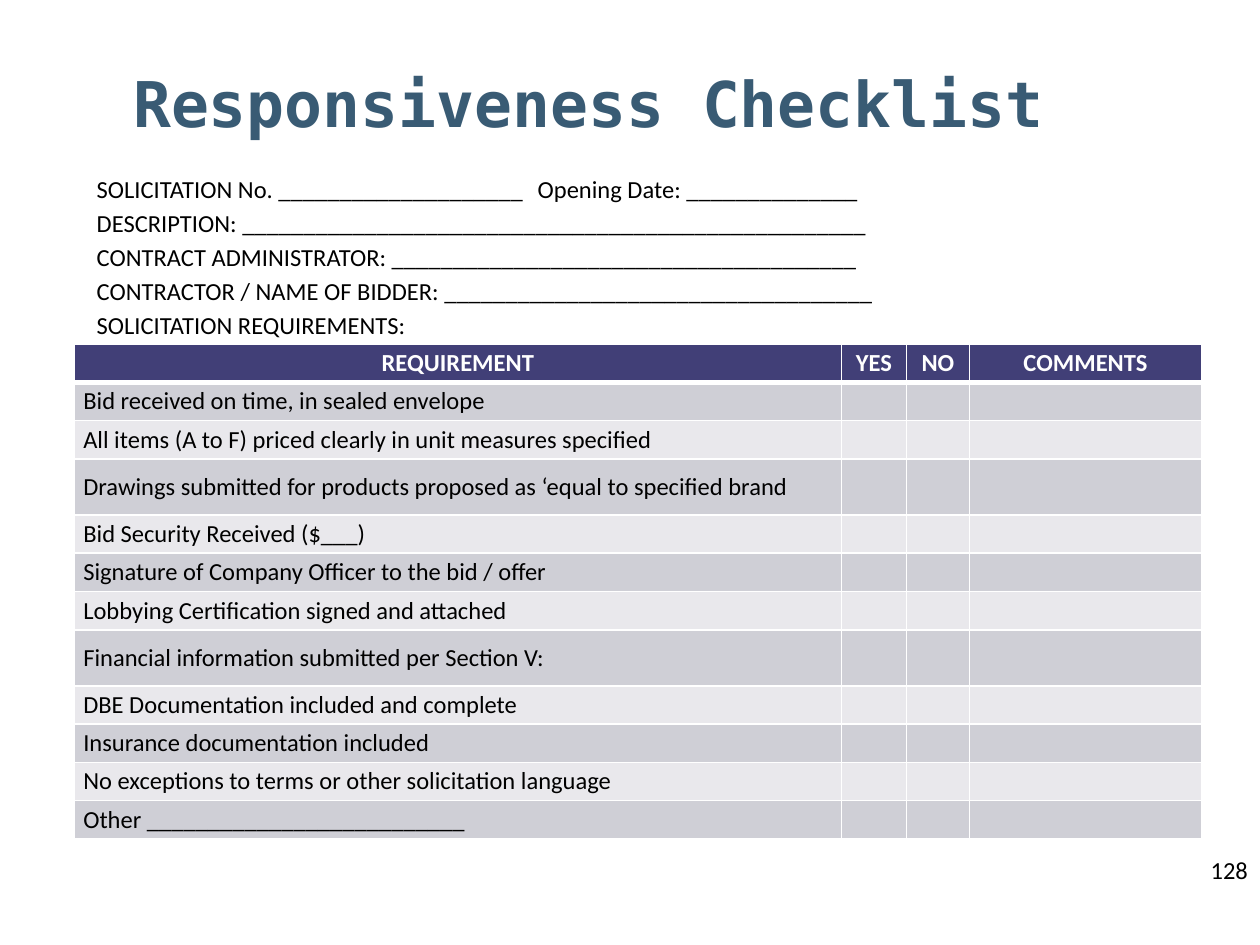
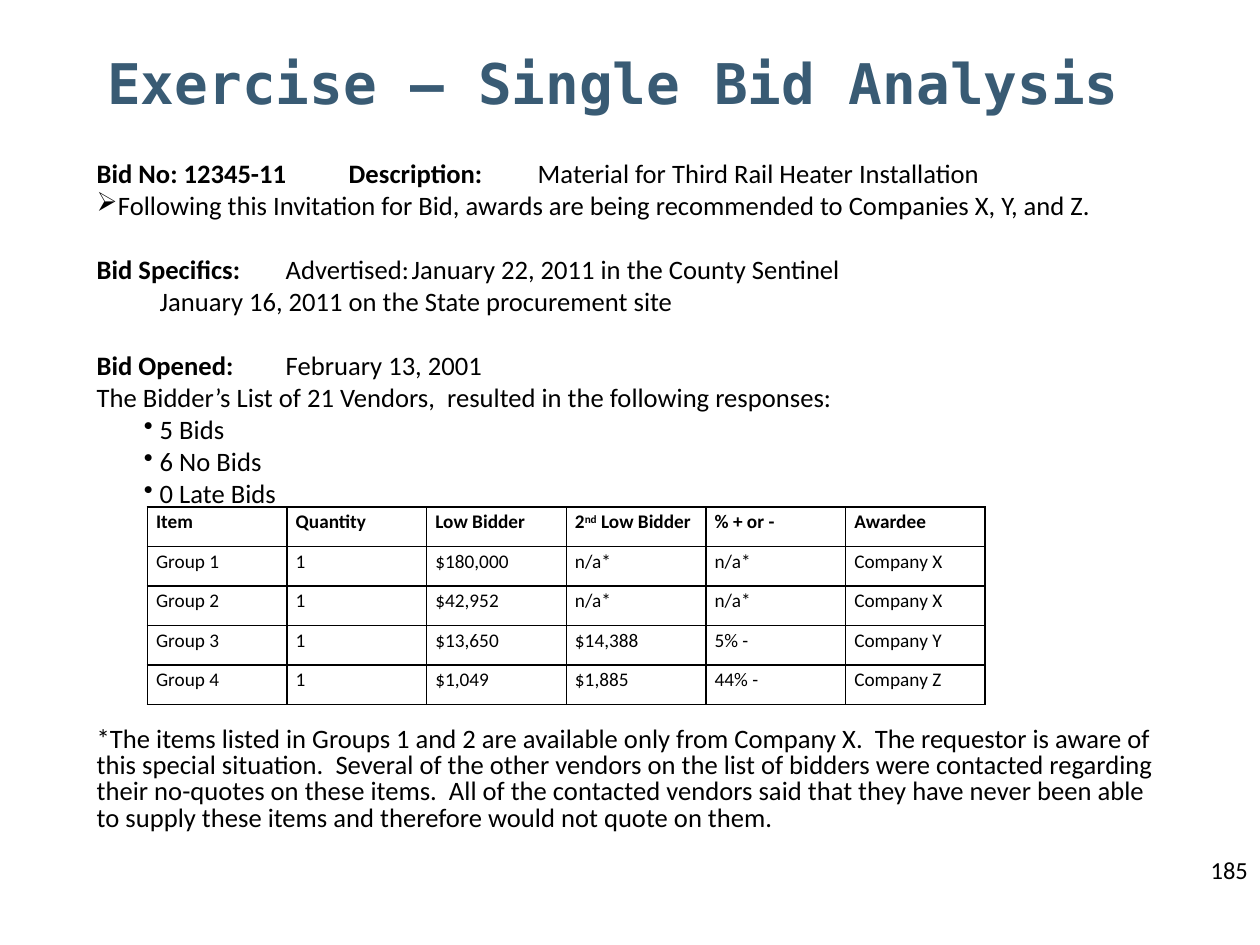
from dataclasses import dataclass

from lxml import etree
from pptx import Presentation
from pptx.dml.color import RGBColor
from pptx.enum.text import MSO_ANCHOR, PP_ALIGN
from pptx.oxml.ns import qn
from pptx.util import Pt

LEFT, CENTER = PP_ALIGN.LEFT, PP_ALIGN.CENTER
TOP, MIDDLE = MSO_ANCHOR.TOP, MSO_ANCHOR.MIDDLE

# Shared style
BODY_FONT, TITLE_FONT = "Calibri", "DejaVu Sans Mono"
BLACK, WHITE = "000000", "FFFFFF"
TITLE_BLUE, HEADER_FILL = "395B74", "413F77"
BANDS = ("CFCFD6", "E9E8EC")
BODY_LEFT = 48.2

# Text grid of the bid analysis
LINE = 18.25
VALUE_TAB, DATE_TAB = 89, 219.4


@dataclass(frozen=True)
class Run:
    text: str
    bold: bool = False
    raised: bool = False


@dataclass(frozen=True)
class Para:
    runs: tuple[Run, ...]
    before: float = 0
    line: float | None = None
    bullet: str = ""
    margin: float = 0
    hang: float = 0
    tabs: tuple[float, ...] = ()


@dataclass(frozen=True)
class Box:
    x: float
    y: float
    w: float
    h: float


@dataclass(frozen=True)
class TableStyle:
    size: float
    border: str
    anchor: MSO_ANCHOR
    header_fill: str | None = None
    header_color: str = BLACK
    header_align: PP_ALIGN = LEFT
    header_rule: float = 1
    bands: tuple[str, ...] = ()
    spacing: float = 1


def rgb(color: str) -> RGBColor:
    return RGBColor.from_string(color)


def plain(text: str, **layout) -> Para:
    return Para((Run(text),), **layout)


def add_text(p, text: str, *, size: float, font: str = BODY_FONT,
             color: str = BLACK, bold: bool = False, raised: bool = False) -> None:
    r = p.add_run()
    r.text = text
    r.font.name, r.font.size, r.font.bold = font, Pt(size), bold
    r.font.color.rgb = rgb(color)
    if raised:
        r.font._element.set("baseline", "30000")


def format_para(p, para: Para) -> None:
    pPr = p._p.get_or_add_pPr()
    pPr.set("marL", str(Pt(para.margin)))
    pPr.set("indent", str(Pt(-para.hang)))
    if para.bullet:
        etree.SubElement(pPr, qn("a:buChar"), char=para.bullet)
    if para.tabs:
        tabs = etree.SubElement(pPr, qn("a:tabLst"))
        for pos in para.tabs:
            etree.SubElement(tabs, qn("a:tab"), pos=str(Pt(pos)), algn="l")
    if para.line:
        p.line_spacing = Pt(para.line)
    p.space_before = Pt(para.before)


def add_box(s, box: Box, paras: list[Para], *, anchor: MSO_ANCHOR = TOP,
            align: PP_ALIGN = LEFT, **style):
    sp = s.shapes.add_textbox(Pt(box.x), Pt(box.y), Pt(box.w), Pt(box.h))
    tf = sp.text_frame
    tf.word_wrap, tf.vertical_anchor = True, anchor
    for i, para in enumerate(paras):
        p = tf.add_paragraph() if i else tf.paragraphs[0]
        format_para(p, para)
        p.alignment = align
        for run in para.runs:
            add_text(p, run.text, bold=run.bold, raised=run.raised, **style)
    return sp


def add_slide(prs, title: str, title_box: Box, title_size: float, number: str):
    s = prs.slides.add_slide(prs.slide_layouts[6])
    page = add_box(s, Box(684.7, 485.3, 35.3, 30), [plain(number)], size=14)
    page.text_frame.margin_right = 0
    add_box(s, title_box, [Para((Run(title, bold=True),))], size=title_size,
            font=TITLE_FONT, color=TITLE_BLUE, anchor=MIDDLE, align=CENTER)
    return s


def set_borders(cell, color: str, bottom: float, top: float) -> None:
    tcPr = cell._tc.get_or_add_tcPr()
    widths = {"lnL": 1, "lnR": 1, "lnT": top, "lnB": bottom}
    for i, (side, width) in enumerate(widths.items()):
        ln = etree.Element(qn(f"a:{side}"), w=str(Pt(width)))
        fill = etree.SubElement(ln, qn("a:solidFill"))
        etree.SubElement(fill, qn("a:srgbClr"), val=color)
        tcPr.insert(i, ln)


def fill_cell(cell, color: str | None) -> None:
    if color:
        cell.fill.solid()
        cell.fill.fore_color.rgb = rgb(color)
    else:
        cell.fill.background()


def add_table(s, x: float, y: float, widths: list[float], heights: list[float],
              rows: list[tuple], style: TableStyle) -> None:
    tbl = s.shapes.add_table(len(rows), len(widths), Pt(x), Pt(y),
                             Pt(sum(widths)), Pt(sum(heights))).table
    tbl.first_row = tbl.horz_banding = False
    for col, width in zip(tbl.columns, widths):
        col.width = Pt(width)
    for i, (row, height) in enumerate(zip(rows, heights)):
        tbl.rows[i].height = Pt(height)
        header = i == 0
        band = style.bands[(i - 1) % len(style.bands)] if style.bands else None
        for j, content in enumerate(row):
            cell = tbl.cell(i, j)
            cell.margin_left = cell.margin_right = Pt(5)
            cell.margin_top = cell.margin_bottom = 0
            cell.vertical_anchor = style.anchor
            fill_cell(cell, style.header_fill if header else band)
            set_borders(cell, style.border,
                        bottom=style.header_rule if header else 1,
                        top=style.header_rule if i == 1 else 1)
            p = cell.text_frame.paragraphs[0]
            p.alignment = style.header_align if header else LEFT
            p.line_spacing = style.spacing
            runs = (Run(content),) if isinstance(content, str) else content
            for run in runs:
                if run.text:
                    add_text(p, run.text, size=style.size, bold=header,
                             color=style.header_color if header else BLACK,
                             raised=run.raised)
                else:
                    # An empty cell keeps the row's text size
                    p._p.get_or_add_endParaRPr().set("sz", str(style.size * 100))


def build_checklist(prs) -> None:
    s = add_slide(prs, "Responsiveness Checklist", Box(BODY_LEFT, 33.1, 576, 50.4),
                  36, "128")
    # Form fields
    fields = [
        "SOLICITATION No. ____________________\tOpening Date: ______________",
        "DESCRIPTION: ___________________________________________________",
        "CONTRACT ADMINISTRATOR: ______________________________________",
        "CONTRACTOR / NAME OF BIDDER: ___________________________________",
        "SOLICITATION REQUIREMENTS:",
    ]
    add_box(s, Box(BODY_LEFT, 95.8, 576, 383.8),
            [plain(field, before=2.6 if i else 0, tabs=(256,))
             for i, field in enumerate(fields)], size=14)

    # Requirements
    row, tall_row = 21.9, 32
    requirements = [
        ("Bid received on time, in sealed envelope", row),
        ("All items (A to F) priced clearly in unit measures specified", row),
        ("Drawings submitted for products proposed as ‘equal to specified brand", tall_row),
        ("Bid Security Received ($___)", row),
        ("Signature of Company Officer to the bid / offer", row),
        ("Lobbying Certification signed and attached", row),
        ("Financial information submitted per Section V:", tall_row),
        ("DBE Documentation included and complete", row),
        ("Insurance documentation included", row),
        ("No exceptions to terms or other solicitation language", row),
        ("Other __________________________", row),
    ]
    rows = [("REQUIREMENT", "YES", "NO", "COMMENTS")]
    rows += [(name, "", "", "") for name, _ in requirements]
    add_table(s, 42.6, 196.6, [438.2, 37.2, 36, 132.7],
              [row] + [height for _, height in requirements], rows,
              TableStyle(14, WHITE, MIDDLE, header_fill=HEADER_FILL,
                         header_color=WHITE, header_align=CENTER,
                         header_rule=3, bands=BANDS))


def build_bid_analysis(prs) -> None:
    s = add_slide(prs, "Exercise – Single Bid Analysis", Box(BODY_LEFT, 18, 604.8, 58.3),
                  32, "185")
    # Bid facts, responses and the note below the table
    paras = [
        Para((Run("Bid No: 12345-11\tDescription:", bold=True),
              Run("\tMaterial for Third Rail Heater Installation")),
             line=LINE, tabs=(216, 299.5)),
        plain("Following this Invitation for Bid, awards are being recommended "
              "to Companies X, Y, and Z.", line=LINE, bullet="➢"),
        Para((Run("Bid Specifics:", bold=True),
              Run("\tAdvertised:\tJanuary 22, 2011 in the County Sentinel")),
             before=LINE, line=LINE, tabs=(VALUE_TAB, DATE_TAB)),
        plain("\tJanuary 16, 2011 on the State procurement site",
              line=LINE, tabs=(DATE_TAB,)),
        Para((Run("Bid Opened:", bold=True), Run("\tFebruary 13, 2001")),
             before=LINE, line=LINE, tabs=(VALUE_TAB,)),
        plain("The Bidder’s List of 21 Vendors,  resulted in the following responses:",
              line=LINE),
    ]
    paras += [plain(text, line=LINE, bullet="•", margin=36, hang=9)
              for text in ("5 Bids", "6 No Bids", "0 Late Bids")]
    paras.append(plain(
        "*The items listed in Groups 1 and 2 are available only from Company X.  "
        "The requestor is aware of this special situation.  Several of the other "
        "vendors on the list of bidders were contacted regarding their no-quotes "
        "on these items.  All of the contacted vendors said that they have never "
        "been able to supply these items and therefore would not quote on them.",
        before=125, line=15))
    add_box(s, Box(BODY_LEFT, 86.4, 625, 396), paras, size=15.2)

    # Bids by group
    second_low = (Run("2"), Run("nd", raised=True), Run(" Low Bidder"))
    rows = [
        ("Item", "Quantity", "Low Bidder", second_low, "% + or -", "Awardee"),
        ("Group 1", "1", "$180,000", "n/a*", "n/a*", "Company X"),
        ("Group 2", "1", "$42,952", "n/a*", "n/a*", "Company X"),
        ("Group 3", "1", "$13,650", "$14,388", "5% -", "Company Y"),
        ("Group 4", "1", "$1,049", "$1,885", "44% -", "Company Z"),
    ]
    add_table(s, 84.2, 289.6, [79.8] * 6, [22.6] * len(rows), rows,
              TableStyle(11, BLACK, TOP, spacing=1.15))


def main() -> None:
    prs = Presentation()
    prs.slide_width, prs.slide_height = Pt(720), Pt(540)
    build_checklist(prs)
    build_bid_analysis(prs)
    prs.save("out.pptx")


if __name__ == "__main__":
    main()
